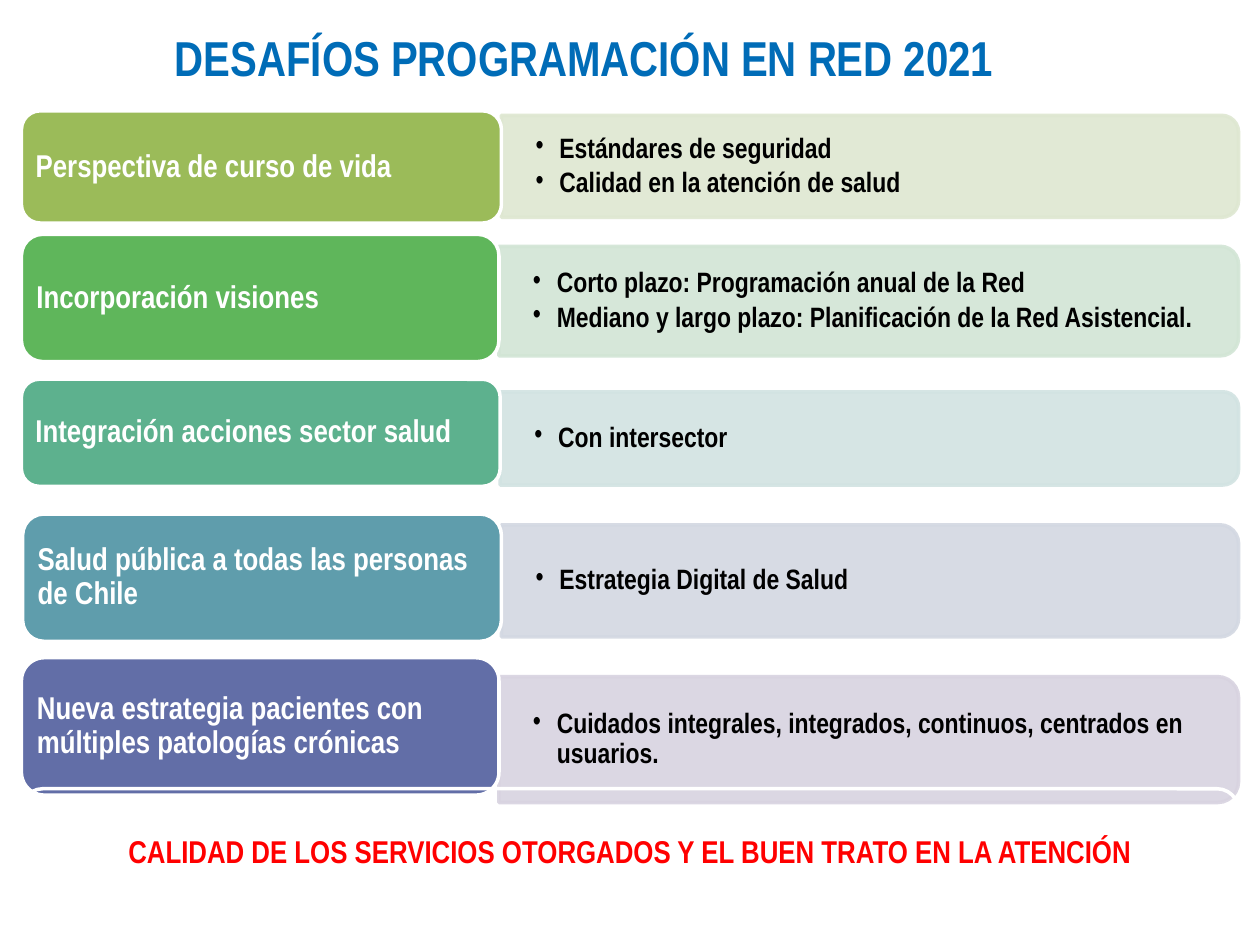
"""Build the slide on the challenges of network programming for 2021."""
from lxml import etree
from pptx import Presentation, util as u
from pptx.dml.color import RGBColor
from pptx.enum import shapes, text
from pptx.oxml.ns import qn

FONT = "Arial Narrow"
Inches = u.Inches


def color(value):
    return RGBColor.from_string(value)


def write(frame, lines, size=18, ink="FFFFFF", align=text.PP_ALIGN.LEFT,
          anchor=text.MSO_ANCHOR.MIDDLE, inset=(0.07, 0.04), spacing=0.9,
          after=0, bullet=False):
    frame.word_wrap = True
    frame.auto_size = text.MSO_AUTO_SIZE.NONE
    frame.vertical_anchor = anchor
    frame.margin_left = frame.margin_right = Inches(inset[0])
    frame.margin_top = frame.margin_bottom = Inches(inset[1])
    for index, line in enumerate(lines):
        para = frame.add_paragraph() if index else frame.paragraphs[0]
        para.alignment = align
        para.line_spacing = spacing
        para.space_before = u.Pt(0)
        para.space_after = u.Pt(after)
        span = para.add_run()
        span.text = line
        span.font.name = FONT
        span.font.size = u.Pt(size)
        span.font.bold = True
        span.font.color.rgb = color(ink)
        if bullet:
            properties = para._p.get_or_add_pPr()
            properties.set("marL", str(Inches(0.19)))
            properties.set("indent", str(-Inches(0.19)))
            etree.SubElement(properties, qn("a:buFont"), typeface=FONT)
            etree.SubElement(properties, qn("a:buChar"), char="•")


deck = Presentation()
deck.slide_width, deck.slide_height = Inches(10), Inches(7.5)
page = deck.slides.add_slide(deck.slide_layouts[5])
kinds = shapes.MSO_SHAPE

title = page.shapes.title
title.left, title.top = Inches(0.17), Inches(0.17)
title.width, title.height = Inches(8.93), Inches(0.83)
write(title.text_frame, ["DESAFÍOS PROGRAMACIÓN EN RED 2021"], size=28, ink="006CB7",
      align=text.PP_ALIGN.CENTER, anchor=text.MSO_ANCHOR.TOP, inset=(0.1, 0.05), spacing=1)

BAR_RIGHT = 9.83
rows = [
    ("Perspectiva de curso de vida", 0.17, 0.88, 3.81, 0.89, "9BBB59", 1.32, 0.81, "DEE7D1",
     ["Estándares de seguridad", "Calidad en la atención de salud"]),
    ("Incorporación visiones", 0.17, 1.86, 3.79, 1.01, "5FB65B", 2.39, 0.87, "D2E5D5",
     ["Corto plazo: Programación anual de la Red",
      "Mediano y largo plazo: Planificación de la Red Asistencial."]),
    ("Integración acciones sector salud", 0.17, 3.01, 3.8, 0.85, "5DB18E", 3.48, 0.74, "D2E3E2",
     ["Con intersector"]),
    ("Salud pública a todas las personas de Chile", 0.18, 4.08, 3.8, 1.01, "5F9DAC",
     4.61, 0.89, "D3D8E2", ["Estrategia Digital de Salud"]),
    ("Nueva estrategia pacientes con múltiples patologías crónicas", 0.17, 5.22, 3.79, 1.09,
     "626EA7", 5.87, 1, "D8D3E0",
     ["Cuidados integrales, integrados, continuos, centrados en usuarios."]),
]
for name, left, top, width, height, fill, middle, depth, tint, points in rows:
    start = left + width
    length = BAR_RIGHT - start
    bar = page.shapes.add_shape(
        kinds.ROUND_2_SAME_RECTANGLE, Inches(start + (length - depth) / 2),
        Inches(middle - length / 2), Inches(depth), Inches(length))
    bar.rotation = 90
    bar.shadow.inherit = False
    bar.fill.solid()
    bar.fill.fore_color.rgb = color(tint)
    bar.line.color.rgb = color(tint)
    bar.line.width = u.Pt(2)
    for shade in bar._element.spPr.iter(qn("a:srgbClr")):
        etree.SubElement(shade, qn("a:alpha"), val="90000")

    box = page.shapes.add_textbox(Inches(start), Inches(middle - depth / 2 + 0.04),
                                  Inches(length - 0.04), Inches(depth - 0.08))
    write(box.text_frame, points, size=16, ink="000000", inset=(0.27, 0.14),
          after=2.4, bullet=True)

    label = page.shapes.add_shape(kinds.ROUNDED_RECTANGLE, Inches(left), Inches(top),
                                  Inches(width), Inches(height))
    label.shadow.inherit = False
    label.fill.solid()
    label.fill.fore_color.rgb = color(fill)
    label.line.color.rgb = color("FFFFFF")
    label.line.width = u.Pt(2)
    write(label.text_frame, [name])

banner = page.shapes.add_shape(kinds.ROUNDED_RECTANGLE, Inches(0.17), Inches(6.26),
                               Inches(9.66), Inches(1.02))
banner.shadow.inherit = False
banner.fill.background()
banner.line.color.rgb = color("FFFFFF")
banner.line.width = u.Pt(2)
write(banner.text_frame, ["CALIDAD DE LOS SERVICIOS OTORGADOS Y EL BUEN TRATO EN LA ATENCIÓN"],
      ink="FF0000", align=text.PP_ALIGN.CENTER)

deck.save("out.pptx")
